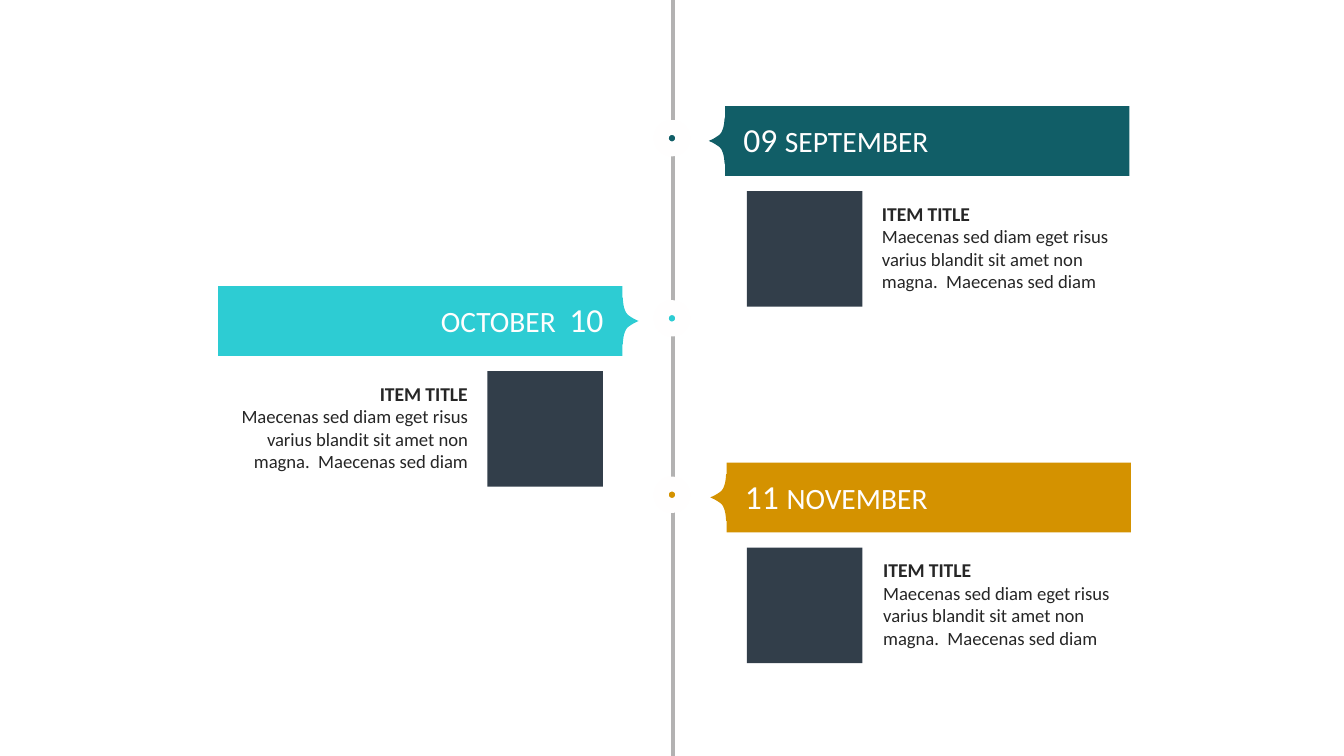
from dataclasses import dataclass

from lxml import etree
from pptx import Presentation
from pptx.dml.color import RGBColor
from pptx.enum.shapes import MSO_CONNECTOR, MSO_SHAPE
from pptx.enum.text import MSO_ANCHOR, PP_ALIGN
from pptx.oxml.ns import qn
from pptx.util import Pt

STRAIGHT = MSO_CONNECTOR.STRAIGHT
RECTANGLE, OVAL = MSO_SHAPE.RECTANGLE, MSO_SHAPE.OVAL
TOP, MIDDLE = MSO_ANCHOR.TOP, MSO_ANCHOR.MIDDLE
LEFT, RIGHT = PP_ALIGN.LEFT, PP_ALIGN.RIGHT


@dataclass(frozen=True)
class Theme:
    font: str = "Calibri"
    teal: str = "115E67"
    aqua: str = "2DCCD3"
    amber: str = "D49200"
    slate: str = "323E4A"
    ink: str = "262626"
    axis: str = "B3B2B2"
    white: str = "FFFEFE"
    day: float = 18
    month: float = 15.8
    heading: float = 10.5
    body: float = 10


@dataclass(frozen=True)
class Side:
    banner: float
    label: float
    photo: float
    item: float
    align: PP_ALIGN


THEME = Theme()
SLIDE_WIDTH, SLIDE_HEIGHT = 720, 405
AXIS_X = 360.7
BANNER_WIDTH, BANNER_HEIGHT = 216.6, 37.4
DOT_SIZE, DOT_RING = 11.5, 8
PHOTO_SIZE = 61.9
EAST = Side(388.5, 398.2, 400.2, 472.5, LEFT)
SOUTH_EAST = Side(389.3, 399.1, 400.2, 473.2, LEFT)
WEST = Side(116.8, 117.4, 261.1, 126, RIGHT)
DETAIL = "Maecenas sed diam eget risus varius blandit sit amet non magna.  Maecenas sed diam"
MILESTONES = [
    (56.8, EAST, THEME.teal, [("09 ", THEME.day), ("SEPTEMBER", THEME.month)]),
    (153.3, WEST, THEME.aqua, [("OCTOBER  ", THEME.month), ("10", THEME.day)]),
    (247.8, SOUTH_EAST, THEME.amber, [("11 ", THEME.day), ("NOVEMBER", THEME.month)]),
]


def rgb(code):
    return RGBColor.from_string(code)


def paint(shape, color):
    shape.shadow.inherit = False
    shape.fill.solid()
    shape.fill.fore_color.rgb = rgb(color)
    shape.line.fill.background()


def add_block(slide, kind, left, top, width, height, color):
    block = slide.shapes.add_shape(kind, Pt(left), Pt(top), Pt(width), Pt(height))
    paint(block, color)
    return block


def add_axis(slide):
    axis = slide.shapes.add_connector(STRAIGHT, Pt(AXIS_X), Pt(0), Pt(AXIS_X), Pt(SLIDE_HEIGHT))
    axis.line.color.rgb = rgb(THEME.axis)
    axis.line.width = Pt(2)
    etree.SubElement(axis._element.spPr, qn("a:effectLst"))


def add_dot(slide, top, color):
    left = SLIDE_WIDTH / 2 - DOT_SIZE / 2
    dot = add_block(slide, OVAL, left, top, DOT_SIZE, DOT_SIZE, color)
    dot.line.color.rgb = rgb(THEME.white)
    dot.line.width = Pt(DOT_RING)


def bezier(start, control_1, control_2, end, steps=8):
    weights = [
        ((1 - t) ** 3, 3 * t * (1 - t) ** 2, 3 * t**2 * (1 - t), t**3)
        for t in (step / steps for step in range(steps + 1))
    ]
    anchors = (start, control_1, control_2, end)
    return [
        tuple(sum(w * anchor[axis] for w, anchor in zip(row, anchors)) for axis in (0, 1))
        for row in weights
    ]


def add_pointer(slide, edge, middle, direction, color):
    root, bend, tip = (0.3, -12.5), (2.9, -3.4), (8.8, 0)
    upper = bezier(root, root, (0.3, -5.8), bend) + bezier(bend, (5.6, -1.2), tip, tip)[1:]
    lower = [(x, -y) for x, y in reversed(upper[:-1])]
    outline = [(-3, -12.5), *upper, *lower, (-3, 12.5)]
    points = [(Pt(edge + direction * x), Pt(middle + y)) for x, y in outline]
    builder = slide.shapes.build_freeform(*points[0])
    builder.add_line_segments(points[1:], close=True)
    paint(builder.convert_to_shape(), color)


def add_text_frame(slide, left, top, width, height, anchor):
    frame = slide.shapes.add_textbox(Pt(left), Pt(top), Pt(width), Pt(height)).text_frame
    frame.word_wrap = True
    frame.vertical_anchor = anchor
    frame.margin_left = frame.margin_right = frame.margin_top = frame.margin_bottom = Pt(0)
    return frame


def style_font(font, size, color, bold=False):
    font.name = THEME.font
    font.size = Pt(size)
    font.bold = bold
    font.color.rgb = rgb(color)


def add_date(slide, left, top, align, parts):
    paragraph = add_text_frame(slide, left, top, 205.9, 25.2, MIDDLE).paragraphs[0]
    paragraph.alignment = align
    for text, size in parts:
        run = paragraph.add_run()
        run.text = text
        style_font(run.font, size, THEME.white)


def add_item(slide, left, top, align):
    frame = add_text_frame(slide, left, top, 124.6, 50.4, TOP)
    heading, detail = frame.paragraphs[0], frame.add_paragraph()
    heading.text, detail.text = "ITEM TITLE", DETAIL
    heading.alignment = detail.alignment = align
    style_font(heading.font, THEME.heading, THEME.ink, bold=True)
    style_font(detail.font, THEME.body, THEME.ink)


def add_milestone(slide, top, side, color, date):
    add_dot(slide, top + 11.5, color)
    add_block(slide, RECTANGLE, side.banner, top, BANNER_WIDTH, BANNER_HEIGHT, color)
    if side.align == LEFT:
        edge, direction = side.banner, -1
    else:
        edge, direction = side.banner + BANNER_WIDTH, 1
    add_pointer(slide, edge, top + BANNER_HEIGHT / 2, direction, color)
    add_date(slide, side.label, top + 5.2, side.align, date)
    add_block(slide, RECTANGLE, side.photo, top + 45.6, PHOTO_SIZE, PHOTO_SIZE, THEME.slate)
    add_item(slide, side.item, top + 51.2, side.align)


def main():
    presentation = Presentation()
    presentation.slide_width, presentation.slide_height = Pt(SLIDE_WIDTH), Pt(SLIDE_HEIGHT)
    slide = presentation.slides.add_slide(presentation.slide_layouts[6])
    add_axis(slide)
    for milestone in MILESTONES:
        add_milestone(slide, *milestone)
    presentation.save("out.pptx")


if __name__ == "__main__":
    main()
